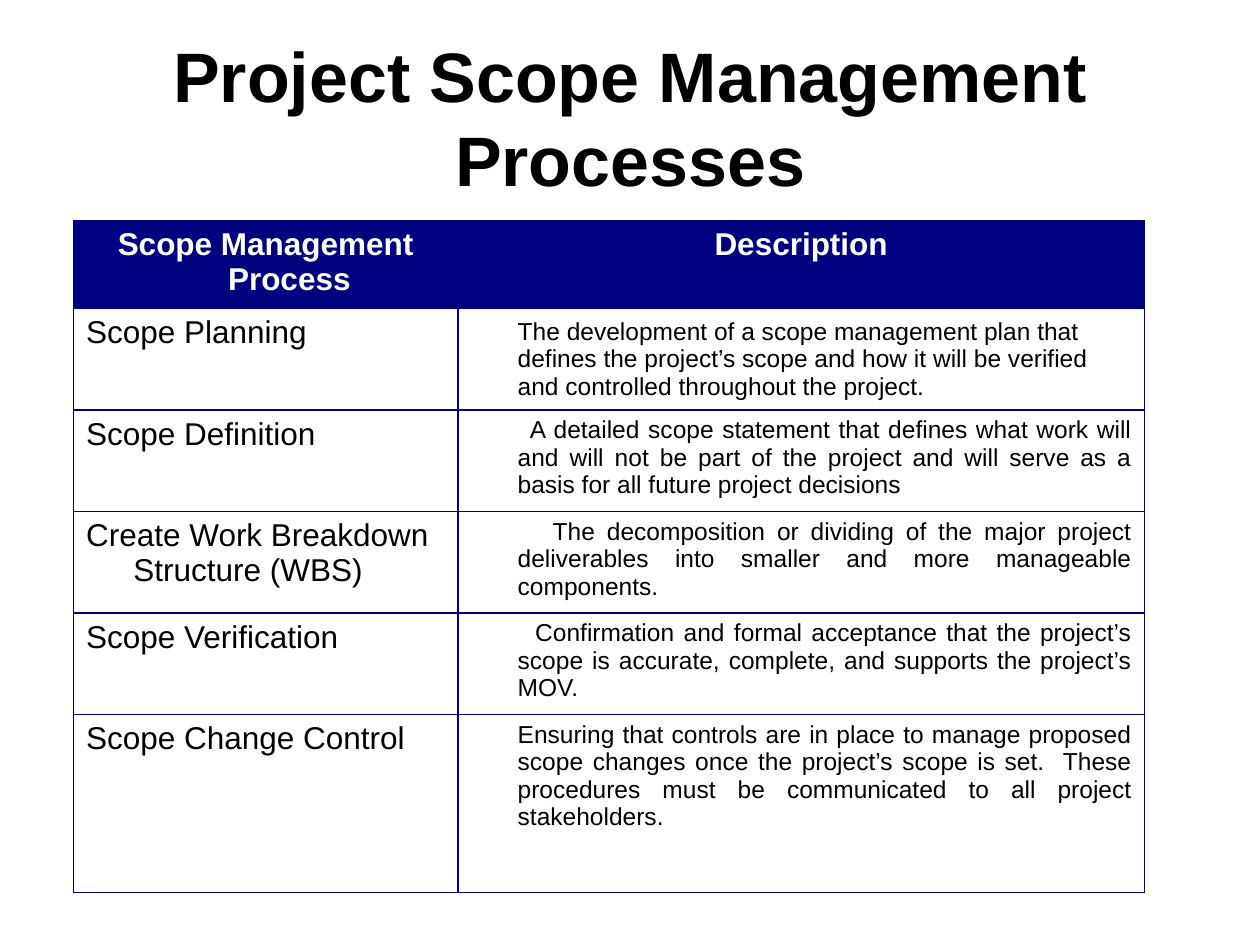
from typing import NamedTuple

from lxml.etree import SubElement
from pptx import Presentation
from pptx.dml.color import RGBColor
from pptx.enum.text import MSO_ANCHOR as Anchor, PP_ALIGN as Align
from pptx.oxml.ns import qn
from pptx.util import Pt

NAVY = RGBColor(0x00, 0x00, 0x80)
WHITE = RGBColor(0xFF, 0xFF, 0xFF)
BLACK = RGBColor(0x00, 0x00, 0x00)
FONT = "Arial"
MARGIN = 27
COLUMN_WIDTHS = (219.6, 392.4)
ROW_HEIGHTS = (50.4, 58, 58, 58, 58, 101.6)


class TextStyle(NamedTuple):
    size: float
    color: RGBColor = BLACK
    bold: bool = False
    align: Align = Align.LEFT
    anchor: Anchor = Anchor.TOP


class Process(NamedTuple):
    name: str
    description: str
    first_indent: float = 0
    align: Align = Align.JUSTIFY
    anchor: Anchor = Anchor.TOP


HEADERS = ("Scope Management Process", "Description")
HEADER_STYLE = TextStyle(18, WHITE, True, Align.CENTER)
NAME_STYLE = TextStyle(18)
TITLE_STYLE = TextStyle(40, BLACK, True, Align.CENTER, Anchor.MIDDLE)

PROCESSES = (
    Process("Scope Planning",
            "The development of a scope management plan that defines the project’s "
            "scope and how it will be verified and controlled throughout the project.",
            align=Align.LEFT, anchor=Anchor.MIDDLE),
    Process("Scope Definition",
            "A detailed scope statement that defines what work will and will not be "
            "part of the project and will serve as a basis for all future project "
            "decisions", 7),
    Process("Create Work Breakdown Structure (WBS)",
            "The decomposition or dividing of the major project deliverables into "
            "smaller and more manageable components.", 20),
    Process("Scope Verification",
            "Confirmation and formal acceptance that the project’s scope is accurate, "
            "complete, and supports the project’s MOV.", 10),
    Process("Scope Change Control",
            "Ensuring that controls are in place to manage proposed scope changes once "
            "the project’s scope is set.  These procedures must be communicated to all "
            "project stakeholders."),
)


def write(tf, text: str, style: TextStyle):
    p = tf.paragraphs[0]
    p.alignment = style.align
    r = p.add_run()
    r.text = text
    font = r.font
    font.name, font.size, font.bold = FONT, Pt(style.size), style.bold
    font.color.rgb = style.color
    return p


def set_borders(cell, color: RGBColor, width: float) -> None:
    tc_pr = cell._tc.get_or_add_tcPr()
    for side in ("a:lnL", "a:lnR", "a:lnT", "a:lnB"):
        ln = SubElement(tc_pr, qn(side), w=str(Pt(width)))
        fill = SubElement(ln, qn("a:solidFill"))
        SubElement(fill, qn("a:srgbClr"), val=str(color))


def fill_cell(cell, text: str, style: TextStyle, indent: float = -MARGIN,
              fill: RGBColor | None = None) -> None:
    p = write(cell.text_frame, text, style)
    p_pr = p._p.get_or_add_pPr()
    p_pr.set("marL", str(Pt(MARGIN)))
    p_pr.set("indent", str(Pt(indent)))
    cell.vertical_anchor = style.anchor
    set_borders(cell, NAVY, 1)
    if fill is None:
        cell.fill.background()
    else:
        cell.fill.solid()
        cell.fill.fore_color.rgb = fill


def add_title(s, text: str) -> None:
    sp = s.shapes.title
    sp.left, sp.top, sp.width, sp.height = Pt(36), Pt(21.6), Pt(648), Pt(90)
    sp.text_frame.vertical_anchor = TITLE_STYLE.anchor
    write(sp.text_frame, text, TITLE_STYLE)


def add_process_table(s) -> None:
    table = s.shapes.add_table(
        len(ROW_HEIGHTS), len(COLUMN_WIDTHS), Pt(42), Pt(126),
        Pt(sum(COLUMN_WIDTHS)), Pt(sum(ROW_HEIGHTS))).table
    table.horz_banding = False
    for column, width in zip(table.columns, COLUMN_WIDTHS):
        column.width = Pt(width)
    for row, height in zip(table.rows, ROW_HEIGHTS):
        row.height = Pt(height)

    for col, header in enumerate(HEADERS):
        fill_cell(table.cell(0, col), header, HEADER_STYLE, fill=NAVY)
    for row, process in enumerate(PROCESSES, start=1):
        fill_cell(table.cell(row, 0), process.name, NAME_STYLE)
        style = TextStyle(14, align=process.align, anchor=process.anchor)
        fill_cell(table.cell(row, 1), process.description, style, process.first_indent)


def main() -> None:
    prs = Presentation()
    prs.slide_width, prs.slide_height = Pt(720), Pt(540)
    s = prs.slides.add_slide(prs.slide_layouts[5])
    add_title(s, "Project Scope Management Processes")
    add_process_table(s)
    prs.save("out.pptx")


if __name__ == "__main__":
    main()
